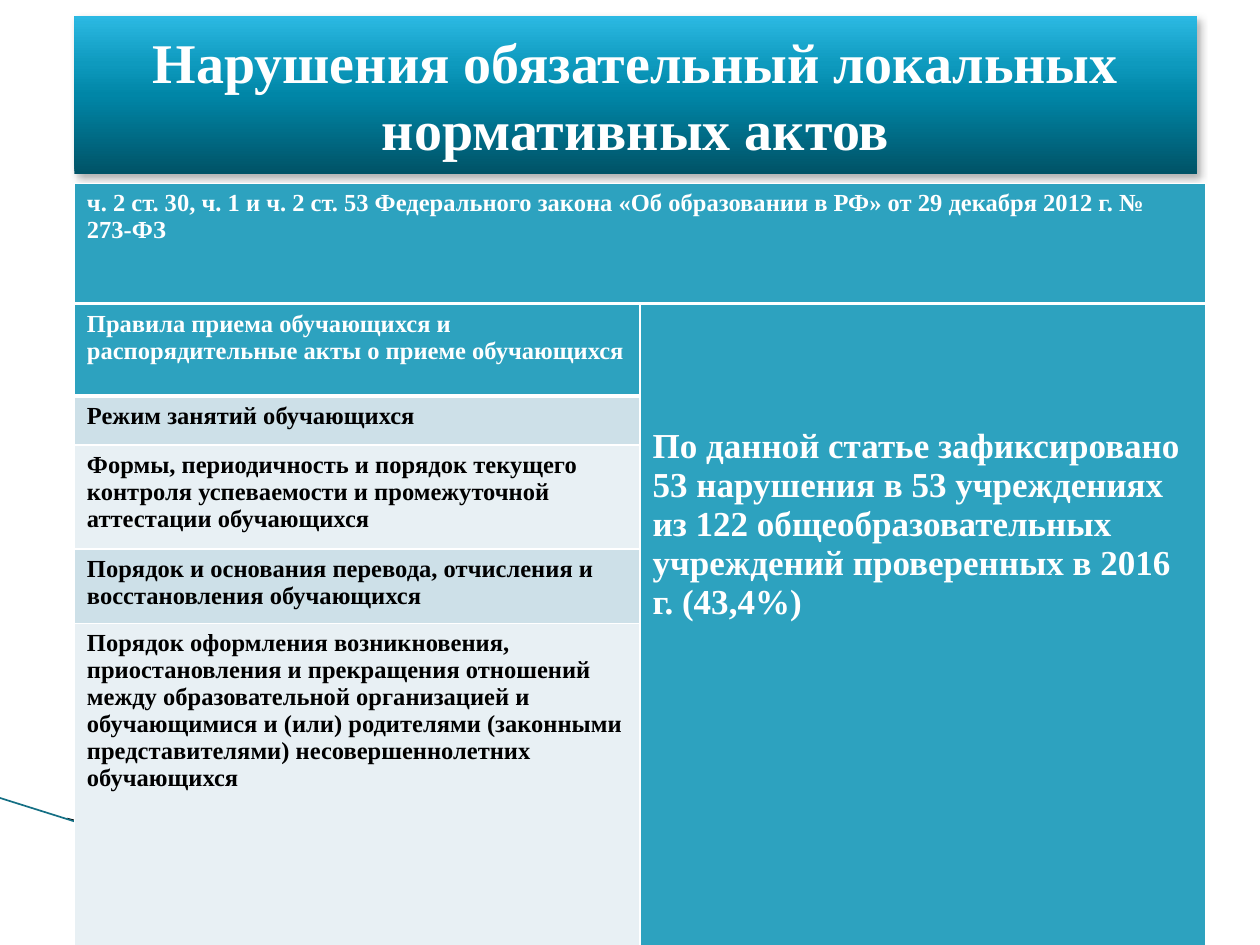
from lxml import etree
from pptx import Presentation
from pptx.dml.color import RGBColor
from pptx.enum.text import MSO_ANCHOR, MSO_AUTO_SIZE, PP_ALIGN
from pptx.enum.shapes import MSO_CONNECTOR
from pptx.oxml import parse_xml
from pptx.oxml.ns import nsdecls, qn
from pptx.util import Pt

CENTER = PP_ALIGN.CENTER
MIDDLE = MSO_ANCHOR.MIDDLE
NO_AUTOFIT = MSO_AUTO_SIZE.NONE
STRAIGHT = MSO_CONNECTOR.STRAIGHT

FONT = "Times New Roman"
COLORS = {"white": "FFFFFF", "black": "000000", "teal": "2DA2BF", "band": "CDE0E8",
          "pale": "E8F0F4", "wedge": "A0CBDC", "line": "146F84"}
TITLE = "Нарушения обязательный локальных нормативных актов"
TITLE_STOPS = [(0, "005367"), (50, "0086A7"), (70, "0E9ABE"), (100, "2CB9E3")]
LAW = ("ч. 2 ст. 30, ч. 1 и ч. 2 ст. 53 Федерального закона «Об образовании в РФ» "
       "от 29 декабря 2012 г. № 273-ФЗ")
ACTS = [
    ("Правила приема обучающихся и распорядительные акты о приеме обучающихся", 52.5),
    ("Режим занятий обучающихся", 28),
    ("Формы, периодичность и порядок текущего контроля успеваемости и промежуточной "
     "аттестации обучающихся", 59.5),
    ("Порядок и основания перевода, отчисления и восстановления обучающихся", 42.5),
    ("Порядок оформления возникновения, приостановления и прекращения отношений между "
     "образовательной организацией и обучающимися и (или) родителями (законными "
     "представителями) несовершеннолетних обучающихся", 60),
]
SUMMARY = ("По данной статье зафиксировано 53 нарушения в 53 учреждениях из 122 "
           "общеобразовательных учреждений проверенных в 2016 г. (43,4%)")
WEDGES = [
    ("wedge", 40, [(39.6, 468.7), (428.4, 540), (328.3, 540), (39.6, 468)]),
    ("black", 100, [(38.2, 467.3), (329, 540), (267.8, 540), (38.9, 468)]),
]
LEFT, TABLE_WIDTH = 42.5, 646.5
LAW_TOP, LAW_HEIGHT = 105, 68.75


def rgb(name):
    """Return the named colour."""
    return RGBColor.from_string(COLORS[name])


def write(frame, text, size, color):
    """Write one bold paragraph and return it."""
    paragraph = frame.paragraphs[0]
    run = paragraph.add_run()
    run.text = text
    for name, value in {"name": FONT, "size": Pt(size), "bold": True}.items():
        setattr(run.font, name, value)
    run.font.color.rgb = rgb(color)
    return paragraph


def style_cell(cell, fill, bottom):
    """Give a cell white borders and a solid fill."""
    properties = cell._tc.get_or_add_tcPr()
    for side, width in {"L": 1, "R": 1, "T": 1, "B": bottom}.items():
        properties.append(parse_xml(
            f'<a:ln{side} {nsdecls("a")} w="{Pt(width)}"><a:solidFill>'
            f'<a:srgbClr val="{COLORS["white"]}"/></a:solidFill></a:ln{side}>'))
    cell.fill.solid()
    cell.fill.fore_color.rgb = rgb(fill)


def add_table(slide, top, heights, columns):
    """Add a plain table with equal columns."""
    frame = slide.shapes.add_table(len(heights), columns, Pt(LEFT), Pt(top),
                                   Pt(TABLE_WIDTH), Pt(sum(heights)))
    table = frame.table
    table.first_row = table.horz_banding = False
    for row, height in zip(table.rows, heights):
        row.height = Pt(height)
    return table


def add_decoration(slide):
    """Draw the wedges and the line in the lower left corner."""
    for color, opacity, points in WEDGES:
        corners = [(Pt(x), Pt(y)) for x, y in points]
        builder = slide.shapes.build_freeform(*corners[0])
        builder.add_line_segments(corners[1:], close=True)
        shape = builder.convert_to_shape()
        shape.shadow.inherit = False
        shape.line.fill.background()
        shape.fill.solid()
        shape.fill.fore_color.rgb = rgb(color)
        if opacity < 100:
            value = shape.element.spPr.find(".//" + qn("a:srgbClr"))
            etree.SubElement(value, qn("a:alpha")).set("val", str(opacity * 1000))
    line = slide.shapes.add_connector(STRAIGHT, 0, Pt(456), Pt(267), Pt(540))
    line.line.color.rgb = rgb("line")
    line.line.width = Pt(0.95)
    etree.SubElement(line.element.spPr, qn("a:effectLst"))


def format_title(slide):
    """Place and format the title above the decoration."""
    title = slide.shapes.title
    slide.shapes.element.append(title.element)
    for name, value in {"left": LEFT, "top": 9.25, "width": 641.5, "height": 90}.items():
        setattr(title, name, Pt(value))
    stops = "".join(f'<a:gs pos="{position * 1000}"><a:srgbClr val="{color}"/></a:gs>'
                    for position, color in TITLE_STOPS)
    title.element.spPr.append(parse_xml(
        f'<a:gradFill {nsdecls("a")} rotWithShape="1"><a:gsLst>{stops}</a:gsLst>'
        '<a:lin ang="16200000" scaled="0"/></a:gradFill>'))
    title.element.spPr.append(parse_xml(
        f'<a:effectLst {nsdecls("a")}><a:outerShdw blurRad="{Pt(4.5)}" dist="{Pt(2.6)}" '
        f'dir="{53 * 60000}" algn="tl" rotWithShape="0"><a:srgbClr val="{COLORS["black"]}">'
        '<a:alpha val="30000"/></a:srgbClr></a:outerShdw></a:effectLst>'))
    frame = title.text_frame
    for name, value in {"word_wrap": True, "auto_size": NO_AUTOFIT,
                        "vertical_anchor": MIDDLE}.items():
        setattr(frame, name, value)
    write(frame, TITLE, 32, "white").alignment = CENTER


def add_tables(slide):
    """Add the law heading and the table of local acts."""
    law = add_table(slide, LAW_TOP, [LAW_HEIGHT], 1).cell(0, 0)
    style_cell(law, "teal", 3)
    write(law.text_frame, LAW, 14, "white")

    acts = add_table(slide, LAW_TOP + LAW_HEIGHT, [height for _, height in ACTS], 2)
    for index, (text, _) in enumerate(ACTS):
        head = index == 0
        fill = "teal" if head else ("pale", "band")[index % 2]
        style_cell(acts.cell(index, 0), fill, 3 if head else 1)
        style_cell(acts.cell(index, 1), "teal", 1)
        write(acts.cell(index, 0).text_frame, text, 14, "white" if head else "black")
    summary = acts.cell(0, 1)
    summary.merge(acts.cell(len(ACTS) - 1, 1))
    summary.margin_top = Pt(70.5)
    write(summary.text_frame, SUMMARY, 20, "white")


def main():
    """Build and save the slide."""
    presentation = Presentation()
    presentation.slide_width, presentation.slide_height = Pt(720), Pt(540)
    slide = presentation.slides.add_slide(presentation.slide_layouts[5])
    add_decoration(slide)
    format_title(slide)
    add_tables(slide)
    presentation.save("out.pptx")


if __name__ == "__main__":
    main()
